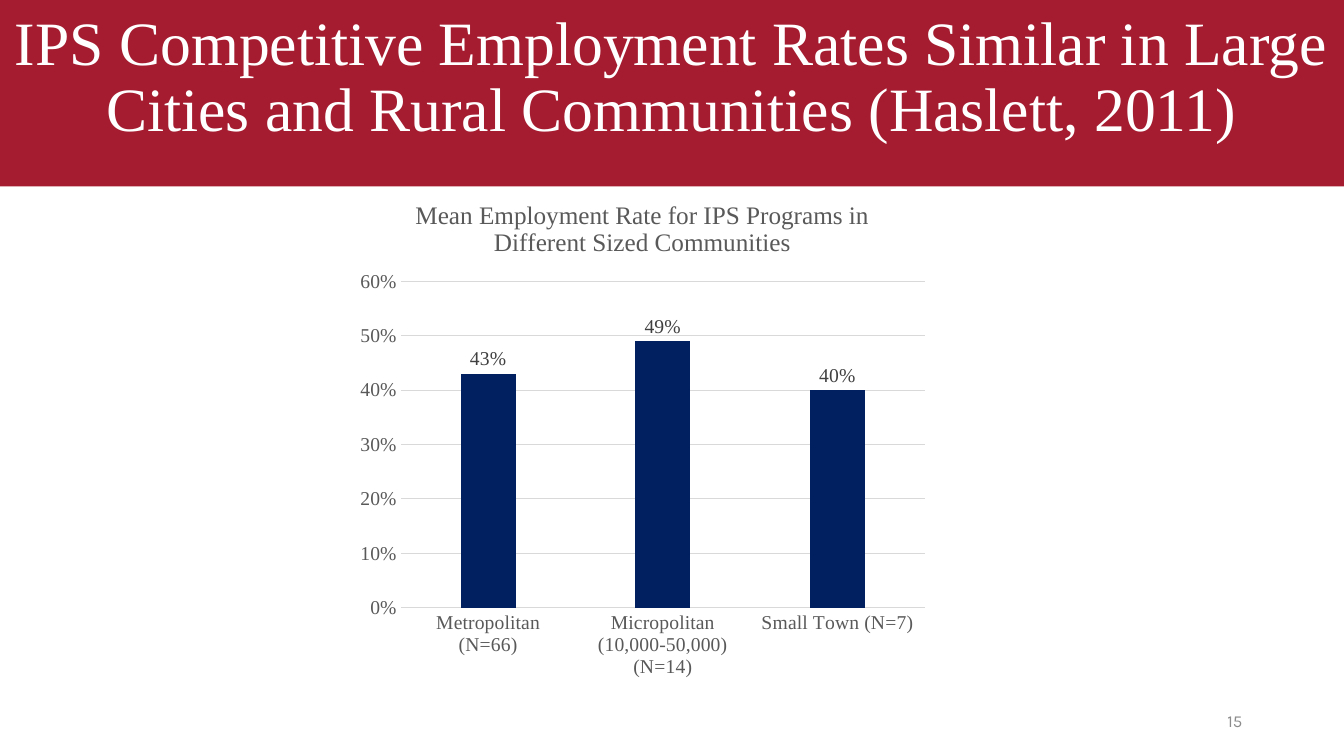
from dataclasses import dataclass

from lxml import etree
from pptx import Presentation
from pptx.chart.data import CategoryChartData
from pptx.dml.color import RGBColor
from pptx.enum.chart import XL_CHART_TYPE as ChartType
from pptx.enum.chart import XL_LABEL_POSITION as LabelPosition
from pptx.enum.chart import XL_TICK_MARK as TickMark
from pptx.enum.shapes import MSO_SHAPE as Preset
from pptx.enum.text import MSO_ANCHOR as Anchor
from pptx.enum.text import PP_ALIGN as Align
from pptx.oxml.ns import qn
from pptx.util import Inches, Pt


@dataclass(frozen=True)
class Theme:
    crimson: str = "A51C30"
    navy: str = "002060"
    white: str = "FFFFFF"
    axis_text: str = "595959"
    label_text: str = "404040"
    grid: str = "D9D9D9"
    number_text: str = "8C8C8C"
    serif: str = "Times New Roman"
    sans: str = "Karla"
    title_size: int = 44
    chart_title_size: int = 18
    chart_size: int = 14
    number_size: int = 12


THEME = Theme()
RATES = {
    "Metropolitan (N=66)": 0.43,
    "Micropolitan (10,000-50,000) (N=14)": 0.49,
    "Small Town (N=7)": 0.4,
}


def set_font(font, name, size, color):
    for key, value in {"name": name, "size": Pt(size), "bold": False}.items():
        setattr(font, key, value)
    font.color.rgb = RGBColor.from_string(color)


def set_line(line, color):
    line.width = Pt(0.75)
    line.color.rgb = RGBColor.from_string(color)


def add_text(page, box, text, align, name, size, color):
    frame = page.shapes.add_textbox(*map(Inches, box)).text_frame
    frame.word_wrap = True
    frame.vertical_anchor = Anchor.MIDDLE
    para = frame.paragraphs[0]
    para.alignment = align
    span = para.add_run()
    span.text = text
    set_font(span.font, name, size, color)
    return para


def add_header(page, box):
    left, top, width, height = box
    band = page.shapes.add_shape(Preset.RECTANGLE, *map(Inches, box))
    band.shadow.inherit = False
    band.fill.solid()
    band.fill.fore_color.rgb = RGBColor.from_string(THEME.crimson)
    band.line.fill.background()
    title = add_text(
        page, (left, top - 0.02, width, height - 0.25),
        "IPS Competitive Employment Rates Similar in Large Cities "
        "and Rural Communities (Haslett, 2011)",
        Align.CENTER, THEME.serif, THEME.title_size, THEME.white)
    title.line_spacing = 0.9


def place_plot(chart, shares):
    """Fix the inner plot area at x, y, w, h shares of the chart."""
    plot_area = chart.plots[0]._element.getparent()
    for old in plot_area.findall(qn("c:layout")):
        plot_area.remove(old)
    layout = etree.Element(qn("c:layout"))
    plot_area.insert(0, layout)
    manual = etree.SubElement(layout, qn("c:manualLayout"))
    settings = {"layoutTarget": "inner", "xMode": "edge", "yMode": "edge"}
    settings.update(zip("xywh", map(str, shares)))
    for tag, value in settings.items():
        etree.SubElement(manual, qn(f"c:{tag}")).set("val", value)


def add_rate_chart(page, box):
    data = CategoryChartData(number_format="0%")
    data.categories = list(RATES)
    data.add_series("Series 1", list(RATES.values()))
    chart = page.shapes.add_chart(
        ChartType.COLUMN_CLUSTERED, *map(Inches, box), data).chart
    set_font(chart.font, THEME.serif, THEME.chart_size, THEME.axis_text)
    chart.has_legend = False

    chart.has_title = True
    title = chart.chart_title
    title.include_in_layout = False
    span = title.text_frame.paragraphs[0].add_run()
    span.text = "Mean Employment Rate for IPS Programs in Different Sized Communities"
    set_font(span.font, THEME.serif, THEME.chart_title_size, THEME.axis_text)

    for axis in (chart.category_axis, chart.value_axis):
        axis.major_tick_mark = axis.minor_tick_mark = TickMark.NONE
        set_font(axis.tick_labels.font, THEME.serif, THEME.chart_size, THEME.axis_text)
    set_line(chart.category_axis.format.line, THEME.grid)

    rates = chart.value_axis
    for key, value in {"minimum_scale": 0, "maximum_scale": 0.6, "major_unit": 0.1}.items():
        setattr(rates, key, value)
    rates.format.line.fill.background()
    set_line(rates.major_gridlines.format.line, THEME.grid)
    rates.tick_labels.number_format = "0%"
    rates.tick_labels.number_format_is_linked = False

    plot = chart.plots[0]
    plot.gap_width, plot.overlap, plot.vary_by_categories = 219, -27, False
    fill = plot.series[0].format.fill
    fill.solid()
    fill.fore_color.rgb = RGBColor.from_string(THEME.navy)

    labels = plot.series[0].data_labels
    label_format = {
        "show_value": True,
        "position": LabelPosition.OUTSIDE_END,
        "number_format": "0%",
        "number_format_is_linked": False,
    }
    for key, value in label_format.items():
        setattr(labels, key, value)
    set_font(labels.font, THEME.serif, THEME.chart_size, THEME.label_text)
    place_plot(chart, (0.09, 0.2, 0.89, 0.64))


def add_page_number(page, box):
    add_text(page, box, "15", Align.RIGHT,
             THEME.sans, THEME.number_size, THEME.number_text)


def main():
    deck = Presentation()
    deck.slide_width, deck.slide_height = Inches(13.33), Inches(7.5)
    page = deck.slides.add_slide(deck.slide_layouts[6])
    add_header(page, (0, 0, 13.33, 1.85))
    add_page_number(page, (9.42, 6.95, 3, 0.4))
    add_rate_chart(page, (3.45, 1.78, 5.84, 5.06))
    deck.save("out.pptx")


if __name__ == "__main__":
    main()
